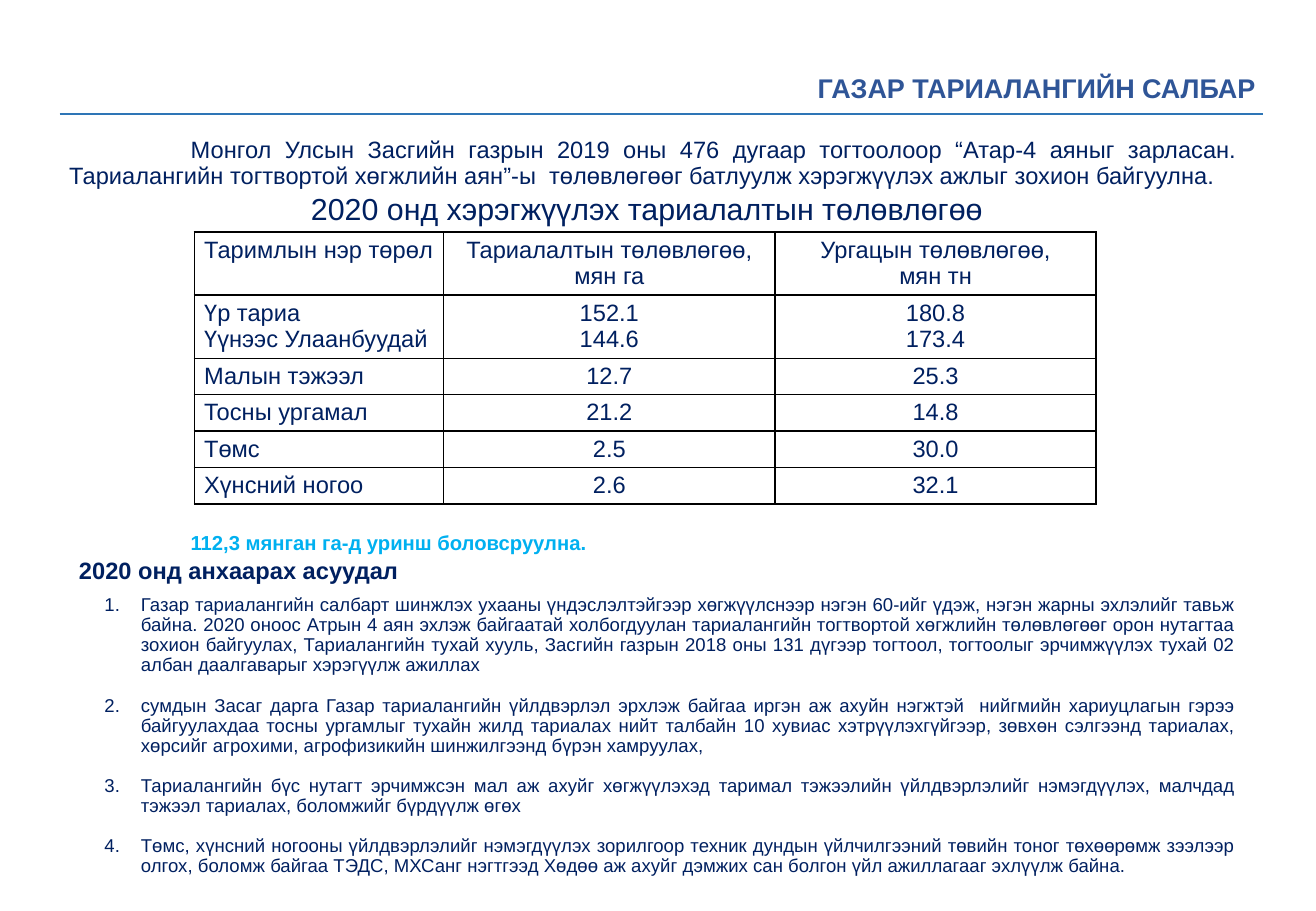
from dataclasses import dataclass

from lxml import etree
from pptx import Presentation
from pptx.dml.color import RGBColor
from pptx.enum import shapes, text
from pptx.oxml import ns
from pptx.util import Inches, Pt

ALIGN = text.PP_ALIGN


@dataclass(frozen=True)
class Theme:
    """Colours, font and type sizes of the slide."""
    font: str = "Arial"
    navy: str = "002060"
    blue: str = "2F5597"
    sky: str = "00B0F0"
    rule: str = "2E75B6"
    grid: str = "000000"
    paper: str = "FFFFFF"
    list: int = 11
    note: int = 12
    body: int = 14
    head: int = 16
    large: int = 18


THEME = Theme()

INTRO = (
    "Монгол Улсын Засгийн газрын 2019 оны 476 дугаар тогтоолоор “Атар-4 аяныг зарласан. "
    "Тариалангийн тогтвортой хөгжлийн аян”-ы  төлөвлөгөөг батлуулж хэрэгжүүлэх ажлыг "
    "зохион байгуулна."
)

CROPS = [
    ("Таримлын нэр төрөл", "Тариалалтын төлөвлөгөө,\nмян га", "Ургацын төлөвлөгөө,\nмян тн"),
    ("Үр тариа\nҮүнээс Улаанбуудай", "152.1\n144.6", "180.8\n173.4"),
    ("Малын тэжээл", "12.7", "25.3"),
    ("Тосны ургамал", "21.2", "14.8"),
    ("Төмс", "2.5", "30.0"),
    ("Хүнсний ногоо", "2.6", "32.1"),
]

TASKS = [
    "Газар тариалангийн салбарт шинжлэх ухааны үндэслэлтэйгээр хөгжүүлснээр нэгэн 60-ийг үдэж, "
    "нэгэн жарны эхлэлийг тавьж байна. 2020 оноос Атрын 4 аян эхлэж байгаатай холбогдуулан "
    "тариалангийн тогтвортой хөгжлийн төлөвлөгөөг орон нутагтаа зохион байгуулах, Тариалангийн "
    "тухай хууль, Засгийн газрын 2018 оны 131 дүгээр тогтоол, тогтоолыг эрчимжүүлэх тухай 02 "
    "албан даалгаварыг хэрэгүүлж ажиллах",
    "сумдын Засаг дарга Газар тариалангийн үйлдвэрлэл эрхлэж байгаа иргэн аж ахуйн нэгжтэй  "
    "нийгмийн хариуцлагын гэрээ байгуулахдаа тосны ургамлыг тухайн жилд тариалах нийт талбайн "
    "10 хувиас хэтрүүлэхгүйгээр, зөвхөн сэлгээнд тариалах, хөрсийг агрохими, агрофизикийн "
    "шинжилгээнд бүрэн хамруулах,",
    "Тариалангийн бүс нутагт эрчимжсэн мал аж ахуйг хөгжүүлэхэд таримал тэжээлийн "
    "үйлдвэрлэлийг нэмэгдүүлэх, малчдад тэжээл тариалах, боломжийг бүрдүүлж өгөх",
    "Төмс, хүнсний ногооны үйлдвэрлэлийг нэмэгдүүлэх зорилгоор техник дундын үйлчилгээний "
    "төвийн тоног төхөөрөмж зээлээр олгох, боломж байгаа ТЭДС, МХСанг нэгтгээд Хөдөө аж ахуйг "
    "дэмжих сан болгон үйл ажиллагааг эхлүүлж байна.",
]


def add_sub(parent, tag, **attrs):
    """Append a DrawingML child element."""
    return etree.SubElement(parent, ns.qn(tag), attrs)


def style(par, size, color=THEME.navy, bold=False, align=ALIGN.LEFT):
    """Set the alignment and font of a paragraph."""
    par.alignment = align
    font = par.font
    font.name, font.size, font.bold = THEME.font, Pt(size), bold
    font.color.rgb = RGBColor.from_string(color)


def pad(item):
    """Give a text frame or cell its narrow margins."""
    item.margin_left = item.margin_right = Inches(0.08)
    item.margin_top = item.margin_bottom = Inches(0.04)


def indent(par, left, first):
    """Set the left margin and first-line indent in inches."""
    props = par._p.get_or_add_pPr()
    props.set("marL", str(Inches(left)))
    props.set("indent", str(Inches(first)))
    return props


def add_text(slide, box, words, size, **look):
    """Add a wrapped text box with one styled paragraph."""
    frame = slide.shapes.add_textbox(*map(Inches, box)).text_frame
    frame.word_wrap = True
    frame.text = words
    style(frame.paragraphs[0], size, **look)
    return frame


def add_block(slide, box, words, size, **look):
    """Add a tightly set text box centred on its height."""
    frame = add_text(slide, box, words, size, **look)
    frame.vertical_anchor = text.MSO_ANCHOR.MIDDLE
    pad(frame)
    for par in frame.paragraphs:
        style(par, size, **look)
        par.line_spacing = 0.9
    return frame


def add_tasks(slide, box):
    """Add the numbered list of tasks."""
    frame = add_block(slide, box, "\n".join(TASKS), THEME.list, align=ALIGN.JUSTIFY)
    for par in frame.paragraphs:
        par.space_after = Pt(12)
        props = indent(par, 0.3, -0.3)
        mark = add_sub(props, "a:buAutoNum", type="arabicPeriod")
        props.find(ns.qn("a:defRPr")).addprevious(mark)


def set_title(slide, box, words):
    """Move and format the title placeholder."""
    title = slide.shapes.title
    title.left, title.top, title.width, title.height = map(Inches, box)
    frame = title.text_frame
    frame.text = words
    frame.word_wrap = True
    frame.auto_size = text.MSO_AUTO_SIZE.NONE
    frame.vertical_anchor = text.MSO_ANCHOR.MIDDLE
    style(frame.paragraphs[0], THEME.body, bold=True)
    frame.paragraphs[0].line_spacing = 0.9


def add_rule(slide, left, right, top):
    """Add the thin line under the section name."""
    ends = map(Inches, (left, top, right, top))
    line = slide.shapes.add_connector(shapes.MSO_CONNECTOR.STRAIGHT, *ends)
    line.line.color.rgb = RGBColor.from_string(THEME.rule)
    line.line.width = Pt(1)
    add_sub(line._element.spPr, "a:effectLst")


def fill_cell(cell, words, align):
    """Write one table cell with borders and a plain fill."""
    cell.text = words
    pad(cell)
    for par in cell.text_frame.paragraphs:
        style(par, THEME.body, align=align)
    props = cell._tc.get_or_add_tcPr()
    for side in "LRTB":
        edge = add_sub(props, f"a:ln{side}", w=str(Pt(1)))
        add_sub(add_sub(edge, "a:solidFill"), "a:srgbClr", val=THEME.grid)
    cell.fill.solid()
    cell.fill.fore_color.rgb = RGBColor.from_string(THEME.paper)


def add_crops(slide, box, widths, heights):
    """Add the table of sowing and harvest plans."""
    size = len(CROPS), len(widths)
    table = slide.shapes.add_table(*size, *map(Inches, box)).table
    table.first_row = table.horz_banding = False
    for col, width in zip(table.columns, widths):
        col.width = Inches(width)
    for row, height, crop in zip(table.rows, heights, CROPS):
        row.height = Inches(height)
        for i, (cell, words) in enumerate(zip(row.cells, crop)):
            fill_cell(cell, words, ALIGN.CENTER if i else ALIGN.LEFT)


def main():
    """Build and save the slide."""
    deck = Presentation()
    deck.slide_width, deck.slide_height = Inches(10.83), Inches(7.5)
    slide = deck.slides.add_slide(deck.slide_layouts[5])
    set_title(slide, (0.55, 4.48, 6.85, 0.46), "2020 онд анхаарах асуудал")
    add_crops(slide, (1.6, 1.91, 7.42, 2.24), (2.05, 2.73, 2.64), [0.52] * 2 + [0.3] * 4)
    add_text(slide, (1.47, 4.32, 7.22, 0.3), "112,3 мянган га-д уринш боловсруулна.",
             THEME.note, color=THEME.sky, bold=True)
    intro = add_block(slide, (0.49, 1.09, 9.77, 0.52), INTRO, THEME.body, align=ALIGN.JUSTIFY)
    indent(intro.paragraphs[0], 0, 1)
    add_block(slide, (6.65, 0.48, 3.96, 0.52), "ГАЗАР ТАРИАЛАНГИЙН САЛБАР",
              THEME.head, color=THEME.blue, bold=True)
    add_rule(slide, 0.49, 10.39, 0.94)
    add_tasks(slide, (0.78, 5.1, 9.47, 1.92))
    add_text(slide, (2.46, 1.52, 6.28, 0.4), "2020 онд хэрэгжүүлэх тариалалтын төлөвлөгөө",
             THEME.large)
    deck.save("out.pptx")


if __name__ == "__main__":
    main()
